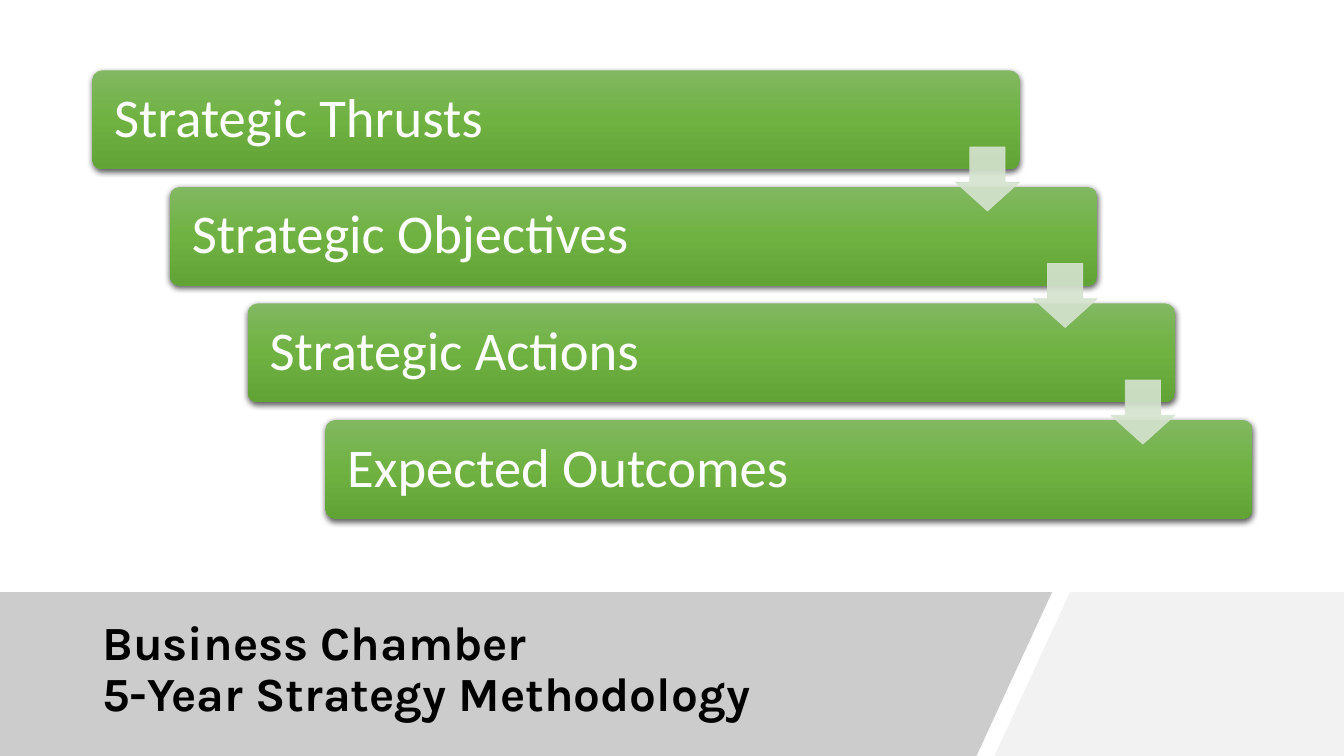
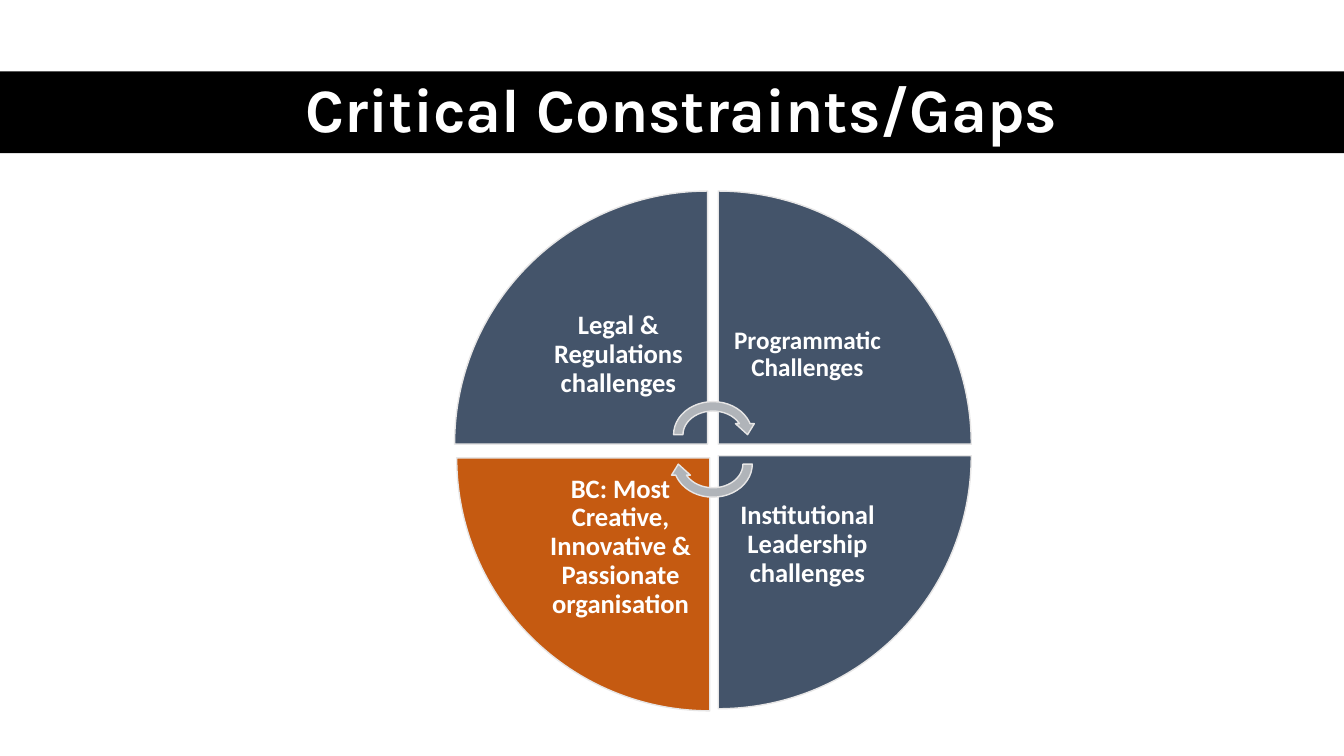
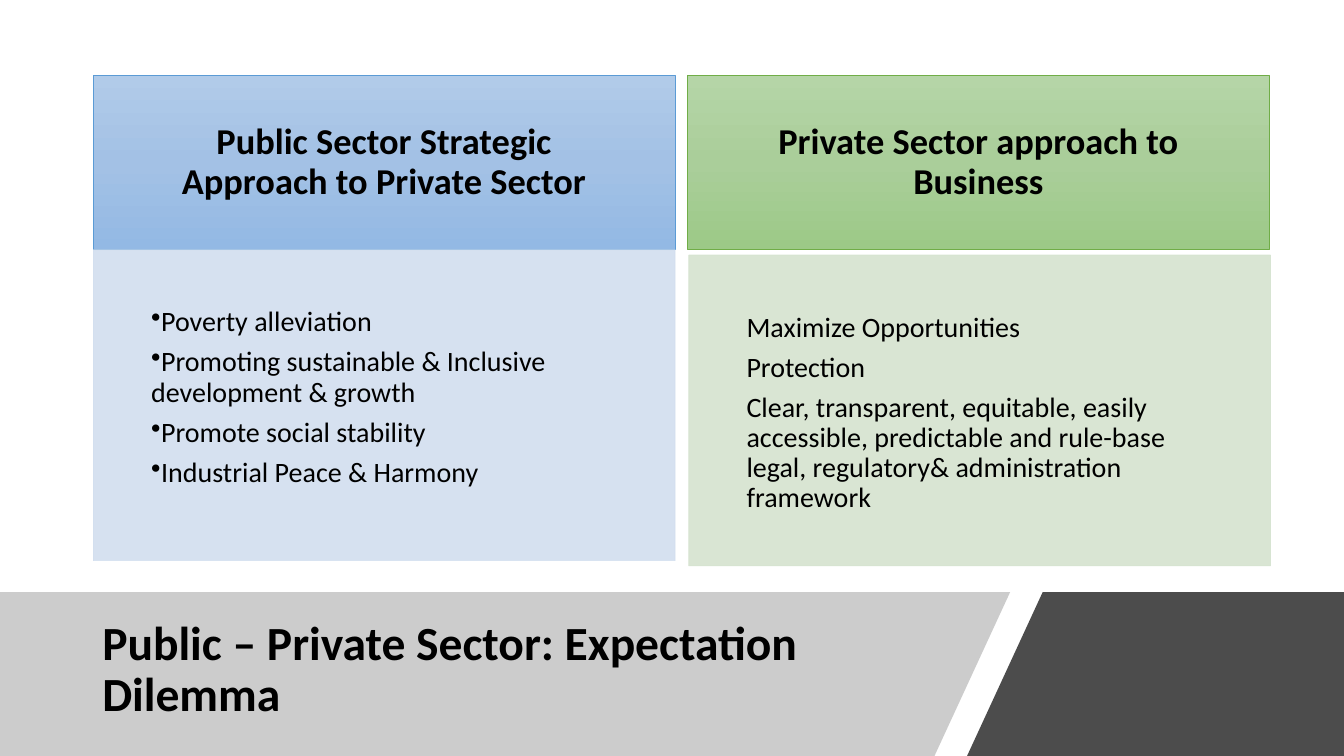
from copy import deepcopy

from lxml.etree import SubElement
from pptx import Presentation
from pptx.dml.color import RGBColor
from pptx.enum.shapes import MSO_SHAPE as SHAPE
from pptx.enum.text import MSO_ANCHOR as ANCHOR, PP_ALIGN as ALIGN
from pptx.oxml.ns import qn
from pptx.util import Pt

PX = 9525
WIDTH, HEIGHT = 1280, 720
BLACK, WHITE = "000000", "FFFFFF"
GREY, PALE_GREY = "808080", "F2F2F2"
NAVY, ORANGE, SILVER, OUTLINE = "44546A", "C55A11", "B0B4B9", "E7E6E6"
GREEN_FADE = ["81B861", "6FB242", "62A336"]
PALE_GREEN, PALE_BLUE = "D5E3CF", "D2DEEF"
rgb = RGBColor.from_string


def paint(shape, fill, line=None, line_width=0.5, opacity=100):
    shape.shadow.inherit = False
    if isinstance(fill, list):
        shape.fill.gradient()
        shape.fill.gradient_angle = 270
        stops = shape.element.spPr.find(".//" + qn("a:gsLst"))
        stops.insert(1, deepcopy(stops[0]))
        for stop, color, position in zip(shape.fill.gradient_stops, fill, (0, 0.5, 1)):
            stop.color.rgb = rgb(color)
            stop.position = position
    else:
        shape.fill.solid()
        shape.fill.fore_color.rgb = rgb(fill)
    if line:
        shape.line.color.rgb = rgb(line)
        shape.line.width = Pt(line_width)
    else:
        shape.line.fill.background()
    if opacity < 100:
        for color in shape.element.spPr.iter(qn("a:srgbClr")):
            SubElement(color, qn("a:alpha"), val=str(opacity * 1000))


def write(box, lines, size, color=BLACK, font="Calibri", bold=False, align=ALIGN.LEFT,
          anchor=ANCHOR.MIDDLE, inset=None, gap=0, bullet=None):
    frame = box.text_frame
    frame.word_wrap = True
    frame.vertical_anchor = anchor
    if inset is not None:
        frame.margin_left = frame.margin_right = inset * PX
        frame.margin_top = frame.margin_bottom = inset * PX
    for index, line in enumerate(lines):
        para = frame.add_paragraph() if index else frame.paragraphs[0]
        para.text = line
        para.alignment = align
        para.line_spacing = 0.9
        para.space_after = Pt(gap)
        para.font.name = font
        para.font.size = Pt(size)
        para.font.bold = bold
        para.font.color.rgb = rgb(color)
        if bullet:
            SubElement(para._p.get_or_add_pPr(), qn("a:buChar"), char=bullet)


deck = Presentation()
deck.slide_width, deck.slide_height = WIDTH * PX, HEIGHT * PX
method, gaps, dilemma = [deck.slides.add_slide(deck.slide_layouts[6]) for _ in range(3)]

BAND_TOP, SLANT = 564, 72
footers = [
    (method, 1002, 1019, PALE_GREY, 100, "Karla", 848,
     "Business Chamber\n5-Year Strategy Methodology"),
    (dilemma, 962, 993, BLACK, 70, "Calibri", 810,
     "Public – Private Sector: Expectation Dilemma"),
]
for page, band_end, corner_start, corner_color, opacity, font, title_width, title in footers:
    for start, end, color, alpha in (
        ((0, 0), (band_end, band_end - SLANT), GREY, 40),
        ((corner_start, corner_start - SLANT), (WIDTH, WIDTH), corner_color, opacity),
    ):
        outline = page.shapes.build_freeform(start[0], BAND_TOP, scale=PX)
        outline.add_line_segments(
            [(end[0], BAND_TOP), (end[1], HEIGHT), (start[1], HEIGHT)], close=True)
        paint(outline.convert_to_shape(), color, opacity=alpha)
    title_box = page.shapes.add_textbox(88 * PX, 581 * PX, title_width * PX, 115 * PX)
    write(title_box, [title], 34, font=font, bold=True)

BAR_WIDTH, BAR_HEIGHT, ARROW = 883, 94, 61
steps = ["Strategic Thrusts", "Strategic Objectives", "Strategic Actions", "Expected Outcomes"]
places = [(88 + 74 * index, 67 + 111 * index) for index in range(len(steps))]
for (left, top), step in zip(places, steps):
    bar = method.shapes.add_shape(
        SHAPE.ROUNDED_RECTANGLE, left * PX, top * PX, BAR_WIDTH * PX, BAR_HEIGHT * PX)
    bar.adjustments[0] = 0.1
    paint(bar, GREEN_FADE)
    shadow = SubElement(
        bar.element.spPr.find(qn("a:effectLst")), qn("a:outerShdw"), blurRad="57150",
        dist="19050", dir="5400000", algn="ctr", rotWithShape="0")
    shade = SubElement(shadow, qn("a:srgbClr"), val=BLACK)
    SubElement(shade, qn("a:alpha"), val="63000")
    write(bar, [step], 39, color=WHITE, inset=18)
for left, top in places[:-1]:
    arrow = method.shapes.add_shape(
        SHAPE.DOWN_ARROW, (left + BAR_WIDTH - ARROW) * PX, (top + 73) * PX,
        ARROW * PX, ARROW * PX)
    arrow.adjustments[0], arrow.adjustments[1] = 0.55, 0.45
    paint(arrow, PALE_GREEN, PALE_GREEN, opacity=90)

banner = gaps.shapes.add_shape(SHAPE.RECTANGLE, 0, 68 * PX, WIDTH * PX, 78 * PX)
paint(banner, BLACK)
banner_title = gaps.shapes.add_textbox(61 * PX, 68 * PX, 1177 * PX, 78 * PX)
write(banner_title, ["Critical Constraints/Gaps"], 44, color=WHITE, font="Karla",
      bold=True, align=ALIGN.CENTER)

WEDGE, LABEL = 241, 170
wedges = [
    (433, 182, 0, NAVY, 19, "Legal & Regulations challenges"),
    (684, 182, 90, NAVY, 18, "Programmatic Challenges"),
    (684, 434, 180, NAVY, 19, "Institutional Leadership challenges"),
    (435, 436, 270, ORANGE, 19, "BC: Most Creative, Innovative & Passionate organisation"),
]
for left, top, turn, color, size, label in wedges:
    wedge = gaps.shapes.add_shape(
        SHAPE.PIE_WEDGE, left * PX, top * PX, WEDGE * PX, WEDGE * PX)
    wedge.rotation = turn
    paint(wedge, color, OUTLINE, 1)
    label_left = left + (WEDGE - LABEL if turn in (0, 270) else 0)
    label_top = top + (WEDGE - LABEL if turn in (0, 90) else 0)
    label_box = gaps.shapes.add_textbox(
        label_left * PX, label_top * PX, LABEL * PX, LABEL * PX)
    write(label_box, [label], size, color=WHITE, bold=True, align=ALIGN.CENTER, inset=14)
for top, turn in ((378, 0), (406, 180)):
    cycle = gaps.shapes.add_shape(SHAPE.CIRCULAR_ARROW, 637 * PX, top * PX, 84 * PX, 72 * PX)
    cycle.rotation = turn
    paint(cycle, SILVER, OUTLINE, 1)

columns = [
    (89, 89, 238, ["B1CBE9", "A3C1E5", "93B9E4"], "5B9BD5", PALE_BLUE, "•",
     "Public Sector Strategic Approach to Private Sector",
     ["Poverty alleviation",
      "Promoting sustainable & Inclusive development & growth",
      "Promote social stability",
      "Industrial Peace & Harmony"]),
    (655, 656, 243, ["B5D5A7", "AACE9A", "9CC987"], "70AD47", PALE_GREEN, None,
     "Private Sector approach to Business",
     ["Maximize Opportunities",
      "Protection",
      "Clear, transparent, equitable, easily accessible, predictable and rule-base legal, "
      "regulatory& administration framework"]),
]
for head_left, body_left, body_top, fade, edge, tint, bullet, heading, points in columns:
    head = dilemma.shapes.add_shape(
        SHAPE.RECTANGLE, head_left * PX, 72 * PX, 554 * PX, 166 * PX)
    paint(head, fade, edge)
    write(head, [heading], 26, bold=True, align=ALIGN.CENTER, inset=44)
    body = dilemma.shapes.add_shape(
        SHAPE.RECTANGLE, body_left * PX, body_top * PX, 554 * PX, 296 * PX)
    paint(body, tint, tint, opacity=90)
    write(body, points, 20, anchor=ANCHOR.TOP, inset=55, gap=7, bullet=bullet)

deck.save("out.pptx")
